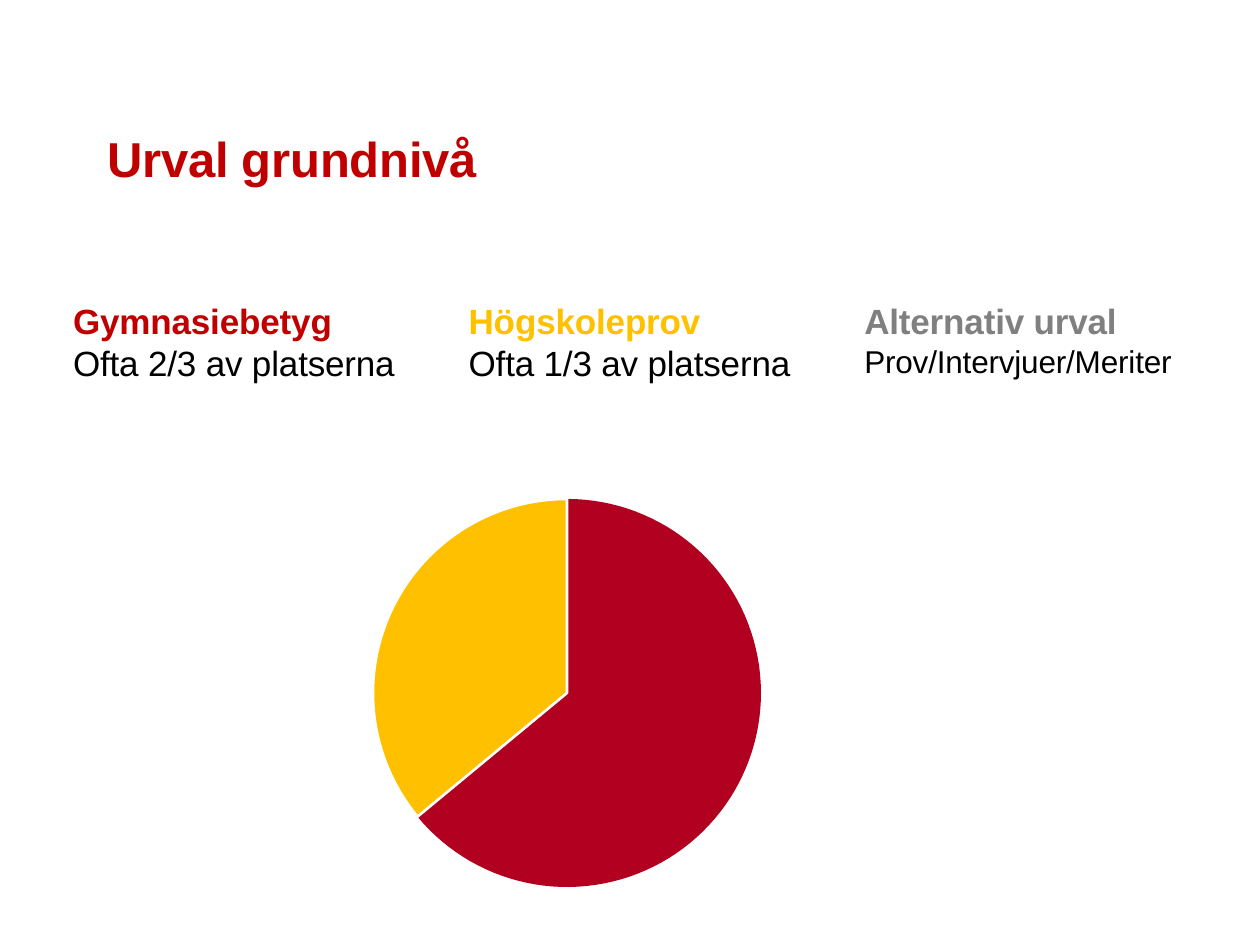
"""Build the slide on selection to undergraduate studies, with a two-part pie."""
from math import cos, radians, sin

from pptx import Presentation
from pptx.dml.color import RGBColor
from pptx.enum.text import MSO_ANCHOR as Anchor
from pptx.util import Inches, Pt

RED = RGBColor(0xC0, 0x00, 0x00)
DARK_RED = RGBColor(0xB1, 0x00, 0x20)
YELLOW = RGBColor(0xFF, 0xC0, 0x00)
GREY = RGBColor(0x80, 0x80, 0x80)
BLACK = RGBColor(0x00, 0x00, 0x00)
WHITE = RGBColor(0xFF, 0xFF, 0xFF)


def add_text(slide, box, lines, top_margin=0, anchor=Anchor.TOP, indent=0):
    shape = slide.shapes.add_textbox(*(Inches(value) for value in box))
    frame = shape.text_frame
    frame_format = {"word_wrap": True, "vertical_anchor": anchor,
                    "margin_left": 0, "margin_right": 0,
                    "margin_top": Inches(top_margin), "margin_bottom": 0}
    for name, value in frame_format.items():
        setattr(frame, name, value)
    for index, (text, size, color, bold) in enumerate(lines):
        paragraph = frame.add_paragraph() if index else frame.paragraphs[0]
        properties = paragraph._p.get_or_add_pPr()
        properties.set("marL", str(Inches(indent)))
        run = paragraph.add_run()
        run.text = text
        font_format = {"name": "Arial", "size": Pt(size), "bold": bold}
        for name, value in font_format.items():
            setattr(run.font, name, value)
        run.font.color.rgb = color
        run._r.get_or_add_rPr().set("spc", "-10")


def add_slice(slide, start, end, color):
    center_x, center_y, radius, steps = 4.5, 5.5, 1.54, 90
    angles = [radians(start + (end - start) * step / steps)
              for step in range(steps + 1)]
    arc = [(Inches(center_x + radius * sin(angle)),
            Inches(center_y - radius * cos(angle))) for angle in angles]
    builder = slide.shapes.build_freeform(Inches(center_x), Inches(center_y))
    builder.add_line_segments(arc, close=True)
    shape = builder.convert_to_shape()
    shape.shadow.inherit = False
    shape.fill.solid()
    shape.fill.fore_color.rgb = color
    return shape


presentation = Presentation()
presentation.slide_width = Inches(10)
presentation.slide_height = Inches(7.5)
slide = presentation.slides.add_slide(presentation.slide_layouts[6])

add_text(slide, (0.85, 0.52, 8.23, 1), [("Urval grundnivå", 28, RED, True)],
         top_margin=0.46, anchor=Anchor.MIDDLE)

columns = [
    ("Gymnasiebetyg", RED, "Ofta 2/3 av platserna", 20),
    ("Högskoleprov", YELLOW, "Ofta 1/3 av platserna", 20),
    ("Alternativ urval", GREY, "Prov/Intervjuer/Meriter", 18),
]
for index, (heading, color, detail, size) in enumerate(columns):
    add_text(slide, (0.57 + 3.14 * index, 2.38, 2.6, 0.68),
             [(heading, 20, color, True), (detail, size, BLACK, False)],
             indent=0.01)

split = 0.64 * 360
grades = add_slice(slide, 0, split, DARK_RED)
grades.line.fill.background()
aptitude_test = add_slice(slide, split, 360, YELLOW)
aptitude_test.line.color.rgb = WHITE
aptitude_test.line.width = Pt(1.5)

presentation.save("out.pptx")
